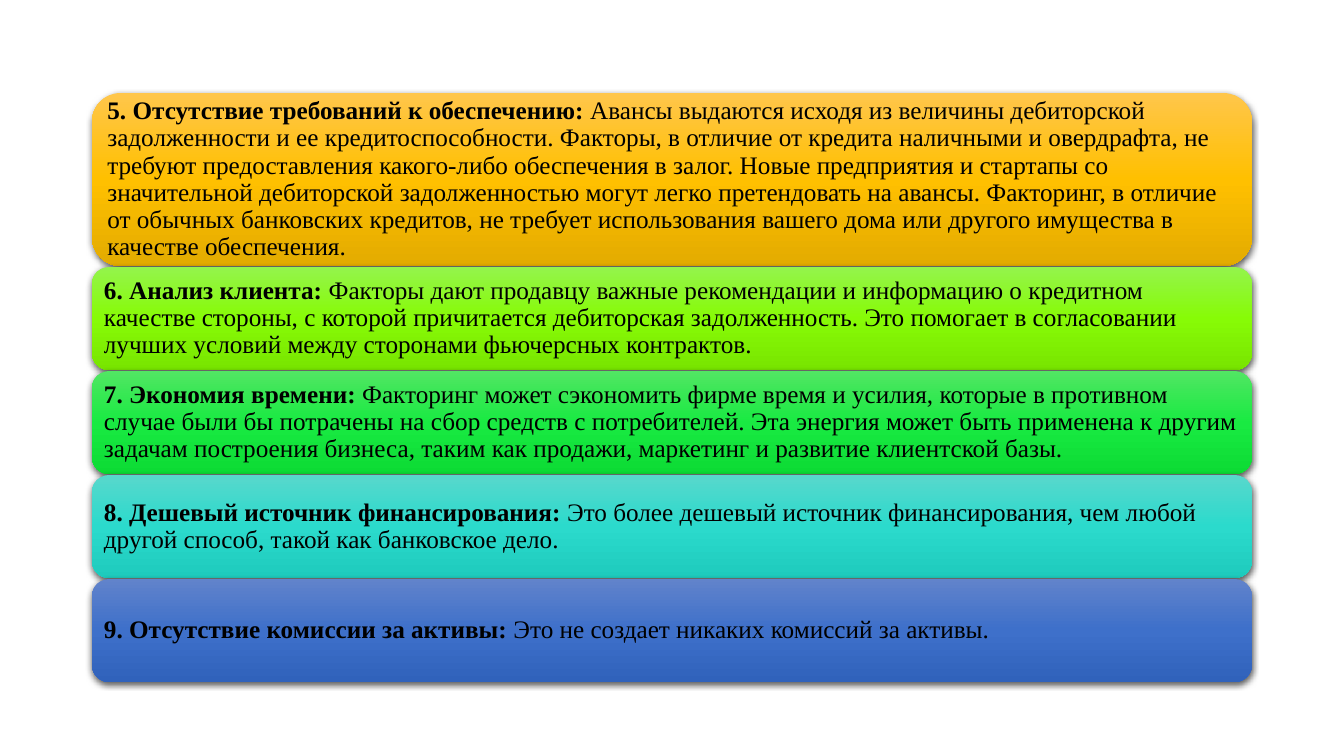
from copy import deepcopy

from lxml import etree
from pptx import Presentation
from pptx.dml.color import RGBColor
from pptx.enum import shapes, text
from pptx.oxml.ns import qn
from pptx.util import Pt

BENEFITS = [
    ("5. Отсутствие требований к обеспечению: ",
     "Авансы выдаются исходя из величины дебиторской задолженности и ее "
     "кредитоспособности. Факторы, в отличие от кредита наличными и овердрафта, не "
     "требуют предоставления какого-либо обеспечения в залог. Новые предприятия и "
     "стартапы со значительной дебиторской задолженностью могут легко претендовать "
     "на авансы. Факторинг, в отличие от обычных банковских кредитов, не требует "
     "использования вашего дома или другого имущества в качестве обеспечения."),
    ("6. Анализ клиента: ",
     "Факторы дают продавцу важные рекомендации и информацию о кредитном качестве "
     "стороны, с которой причитается дебиторская задолженность. Это помогает в "
     "согласовании лучших условий между сторонами фьючерсных контрактов."),
    ("7. Экономия времени: ",
     "Факторинг может сэкономить фирме время и усилия, которые в противном случае "
     "были бы потрачены на сбор средств с потребителей. Эта энергия может быть "
     "применена к другим задачам построения бизнеса, таким как продажи, маркетинг "
     "и развитие клиентской базы."),
    ("8. Дешевый источник финансирования: ",
     "Это более дешевый источник финансирования, чем любой другой способ, такой как "
     "банковское дело."),
    ("9. Отсутствие комиссии за активы: ",
     "Это не создает никаких комиссий за активы."),
]
GRADIENTS = [
    (RGBColor(0xFF, 0xC6, 0x4B), RGBColor(0xFF, 0xC0, 0x00), RGBColor(0xE3, 0xAB, 0x00)),
    (RGBColor(0x94, 0xF4, 0x4C), RGBColor(0x87, 0xFB, 0x06), RGBColor(0x78, 0xE5, 0x00)),
    (RGBColor(0x51, 0xE6, 0x63), RGBColor(0x19, 0xEA, 0x42), RGBColor(0x0C, 0xDB, 0x34)),
    (RGBColor(0x58, 0xD8, 0xCC), RGBColor(0x2B, 0xDA, 0xCC), RGBColor(0x1E, 0xCB, 0xBD)),
    (RGBColor(0x61, 0x83, 0xCB), RGBColor(0x3E, 0x70, 0xCA), RGBColor(0x30, 0x62, 0xBB)),
]
BLACK = RGBColor(0, 0, 0)
FONT = {"name": "Times New Roman", "size": Pt(18)}
LEFT, TOP, WIDTH, GAP, INSET = 92, 93, 1160, 1, 7
HEIGHTS = [173] + [103] * 4
FRAME = {"word_wrap": True, "vertical_anchor": text.MSO_ANCHOR.MIDDLE}
SHADOW = {"blurRad": Pt(4.5), "dist": Pt(1.5), "dir": 90 * 60000,
          "algn": "ctr", "rotWithShape": 0}


def px(length):
    return round(length * 914400 / 100.8)


def apply(target, values):
    for key, value in values.items():
        setattr(target, key, value)


def paint(bar, colours):
    bar.fill.gradient()
    bar.fill.gradient_angle = 270
    stop_list = bar._element.spPr.find(".//" + qn("a:gsLst"))
    stop_list.append(deepcopy(stop_list[-1]))
    for stop, colour, position in zip(bar.fill.gradient_stops, colours, (0, 0.5, 1)):
        stop.color.rgb = colour
        stop.position = position
    bar.line.fill.background()


def cast_shadow(bar):
    bar.shadow.inherit = False
    effects = bar._element.spPr.find(qn("a:effectLst"))
    outer = etree.SubElement(effects, qn("a:outerShdw"),
                             {key: str(value) for key, value in SHADOW.items()})
    colour = etree.SubElement(outer, qn("a:srgbClr"), val=str(BLACK))
    etree.SubElement(colour, qn("a:alpha"), val="63000")


def write(bar, heading, body):
    frame = bar.text_frame
    apply(frame, FRAME)
    apply(frame, {f"margin_{side}": px(INSET) for side in ("left", "top", "right", "bottom")})
    paragraph = frame.paragraphs[0]
    apply(paragraph, {"alignment": text.PP_ALIGN.LEFT, "line_spacing": 0.9})
    for words, bold in ((heading, True), (body, False)):
        run = paragraph.add_run()
        run.text = words
        apply(run.font, {**FONT, "bold": bold})
        run.font.color.rgb = BLACK


def main():
    deck = Presentation()
    apply(deck, {"slide_width": px(1344), "slide_height": px(756)})
    slide = deck.slides.add_slide(deck.slide_layouts[6])
    top = TOP
    for (heading, body), colours, height in zip(BENEFITS, GRADIENTS, HEIGHTS):
        bar = slide.shapes.add_shape(shapes.MSO_SHAPE.ROUNDED_RECTANGLE,
                                     px(LEFT), px(top), px(WIDTH), px(height))
        paint(bar, colours)
        cast_shadow(bar)
        write(bar, heading, body)
        top += height + GAP
    deck.save("out.pptx")


if __name__ == "__main__":
    main()
